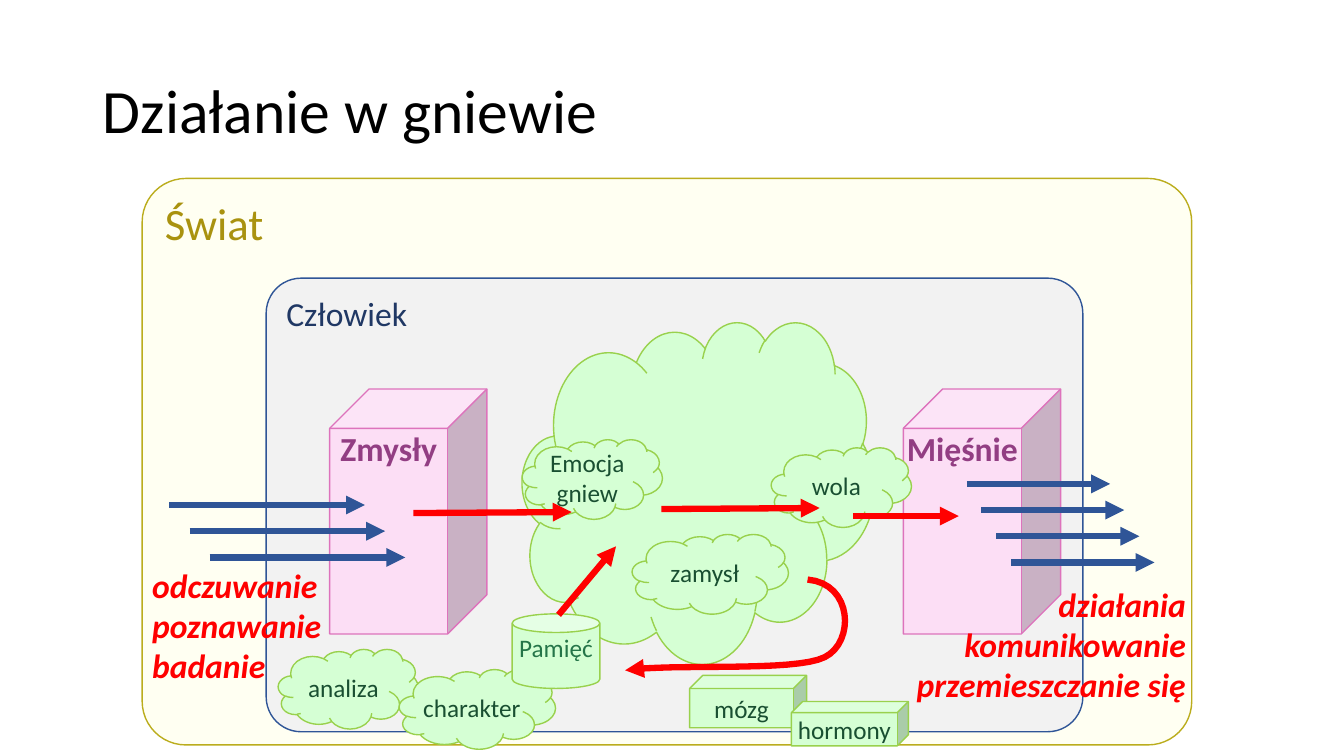
"""Build the slide "Działanie w gniewie": a diagram of a person acting in anger."""
from lxml import etree
from pptx import Presentation
from pptx import util as u
from pptx.dml.color import RGBColor
from pptx.enum import shapes, text
from pptx.oxml.ns import qn

PX = 9144
FONT = "Calibri"
COLORS = {
    "world": "FFFFF2", "world line": "BBAD1D", "world text": "A9920F",
    "person": "F2F2F2", "blue": "2F5597", "person text": "203864",
    "body": "FCDEF5", "body line": "DD73BC", "body text": "923E83",
    "mind": "D5FFD4", "mind line": "99D14D", "mind text": "194F31",
    "memory text": "257549", "red": "FF0000", "black": "000000",
}
ROUNDED = shapes.MSO_SHAPE.ROUNDED_RECTANGLE
CUBE = shapes.MSO_SHAPE.CUBE
CLOUD = shapes.MSO_SHAPE.CLOUD
CAN = shapes.MSO_SHAPE.CAN
TOP, MIDDLE = text.MSO_ANCHOR.TOP, text.MSO_ANCHOR.MIDDLE
LEFT, CENTER, RIGHT = text.PP_ALIGN.LEFT, text.PP_ALIGN.CENTER, text.PP_ALIGN.RIGHT


def write(shape, lines, size, color, align=LEFT, bold=False, italic=False):
    frame = shape.text_frame
    frame.word_wrap = True
    for index, line in enumerate(lines):
        paragraph = frame.add_paragraph() if index else frame.paragraphs[0]
        paragraph.alignment = align
        run = paragraph.add_run()
        run.text = line
        run.font.name = FONT
        run.font.size = u.Pt(size)
        run.font.bold = bold
        run.font.italic = italic
        run.font.color.rgb = RGBColor.from_string(COLORS[color])


def make_arrow(shape, color):
    shape.line.width = u.Pt(4.5)
    shape.line.color.rgb = RGBColor.from_string(COLORS[color])
    etree.SubElement(shape.line._get_or_add_ln(), qn("a:tailEnd"), type="triangle")
    if shape._element.spPr.find(qn("a:effectLst")) is None:
        etree.SubElement(shape._element.spPr, qn("a:effectLst"))


presentation = Presentation()
presentation.slide_width = 1333 * PX
presentation.slide_height = 750 * PX
slide = presentation.slides.add_slide(presentation.slide_layouts[5])

title = slide.shapes.title
title.left, title.top, title.width, title.height = [v * PX for v in (92, 40, 1150, 145)]
title.text_frame.vertical_anchor = MIDDLE
write(title, ["Działanie w gniewie"], 44, "black")
title.text_frame.paragraphs[0].line_spacing = 0.9

blocks = [
    (ROUNDED, (141, 177, 1041, 562), ["Świat"], 32, "world", "world line", "world text"),
    (ROUNDED, (264, 276, 810, 450), ["Człowiek"], 24, "person", "blue", "person text"),
    (CUBE, (896, 386, 156, 243), ["Mięśnie"], 24, "body", "body line", "body text"),
    (CUBE, (327, 386, 156, 243), ["Zmysły"], 24, "body", "body line", "body text"),
]
mind = [
    (CLOUD, (518, 319, 349, 339), []),
    (CUBE, (684, 670, 116, 52), ["mózg"]),
    (CLOUD, (518, 436, 139, 79), ["Emocja", "gniew"]),
    (CLOUD, (276, 644, 139, 79), ["analiza"]),
    (CLOUD, (396, 664, 155, 79), ["charakter"]),
    (CLOUD, (765, 444, 139, 79), ["wola"]),
    (CUBE, (785, 696, 116, 44), ["hormony"]),
    (CLOUD, (627, 530, 155, 79), ["zamysł"]),
]
blocks += [(*part, 18, "mind", "mind line", "mind text") for part in mind]
blocks.append((CAN, (508, 609, 87, 74), ["Pamięć"], 18, "mind", "mind line", "memory text"))
sense_arrows = [(168 + 20 * i, 501 + 26 * i, 362 + 20 * i, 501 + 26 * i) for i in range(3)]
muscle_arrows = [(959 + 44 * i // 3, 480 + 26 * i, 1101 + 44 * i // 3, 480 + 26 * i)
                 for i in range(4)]
blue_arrows = sense_arrows + muscle_arrows
red_arrows = [(410, 509, 567, 508), (554, 610, 611, 542),
              (656, 505, 813, 504), (846, 512, 951, 512)]

for kind, box, lines, size, fill, line, color in blocks:
    if lines == []:
        for ends in blue_arrows:
            arrow = slide.shapes.add_connector(
                shapes.MSO_CONNECTOR.STRAIGHT, *[v * PX for v in ends])
            make_arrow(arrow, "blue")
    block = slide.shapes.add_shape(kind, *[v * PX for v in box])
    block.shadow.inherit = False
    block.fill.solid()
    block.fill.fore_color.rgb = RGBColor.from_string(COLORS[fill])
    block.line.color.rgb = RGBColor.from_string(COLORS[line])
    block.line.width = u.Pt(1)
    frame = block.text_frame
    frame.vertical_anchor = MIDDLE if color == "mind text" else TOP
    if kind == ROUNDED:
        block.adjustments[0] = 0.077
    else:
        frame.margin_left = frame.margin_top = frame.margin_right = frame.margin_bottom = 0
    write(block, lines, size, color, LEFT if kind == ROUNDED else CENTER,
          bold=color == "body text")

curves = [
    ((801, 575), (846, 579), (848, 637), (818, 652)),
    ((818, 652), (788, 667), (666, 658), (620, 665)),
]
STEPS = 16
curve_points = []
for curve in curves:
    for step in range(1, STEPS + 1):
        t = step / STEPS
        weights = ((1 - t) ** 3, 3 * t * (1 - t) ** 2, 3 * t ** 2 * (1 - t), t ** 3)
        curve_points.append(tuple(
            sum(weight * point[axis] for weight, point in zip(weights, curve)) * PX
            for axis in (0, 1)))
builder = slide.shapes.build_freeform(801 * PX, 575 * PX)
builder.add_line_segments(curve_points, close=False)
feedback = builder.convert_to_shape()
feedback.shadow.inherit = False
feedback.fill.background()
make_arrow(feedback, "red")

captions = [
    ((141, 555, 231, 131), LEFT, ["odczuwanie", "poznawanie", "badanie"]),
    ((888, 574, 298, 131), RIGHT, ["działania", "komunikowanie", "przemieszczanie się"]),
]
for box, align, lines in captions:
    caption = slide.shapes.add_textbox(*[v * PX for v in box])
    caption.text_frame.auto_size = text.MSO_AUTO_SIZE.SHAPE_TO_FIT_TEXT
    write(caption, lines, 24, "red", align, bold=True, italic=True)

for ends in red_arrows:
    arrow = slide.shapes.add_connector(
        shapes.MSO_CONNECTOR.STRAIGHT, *[v * PX for v in ends])
    make_arrow(arrow, "red")

presentation.save("out.pptx")
